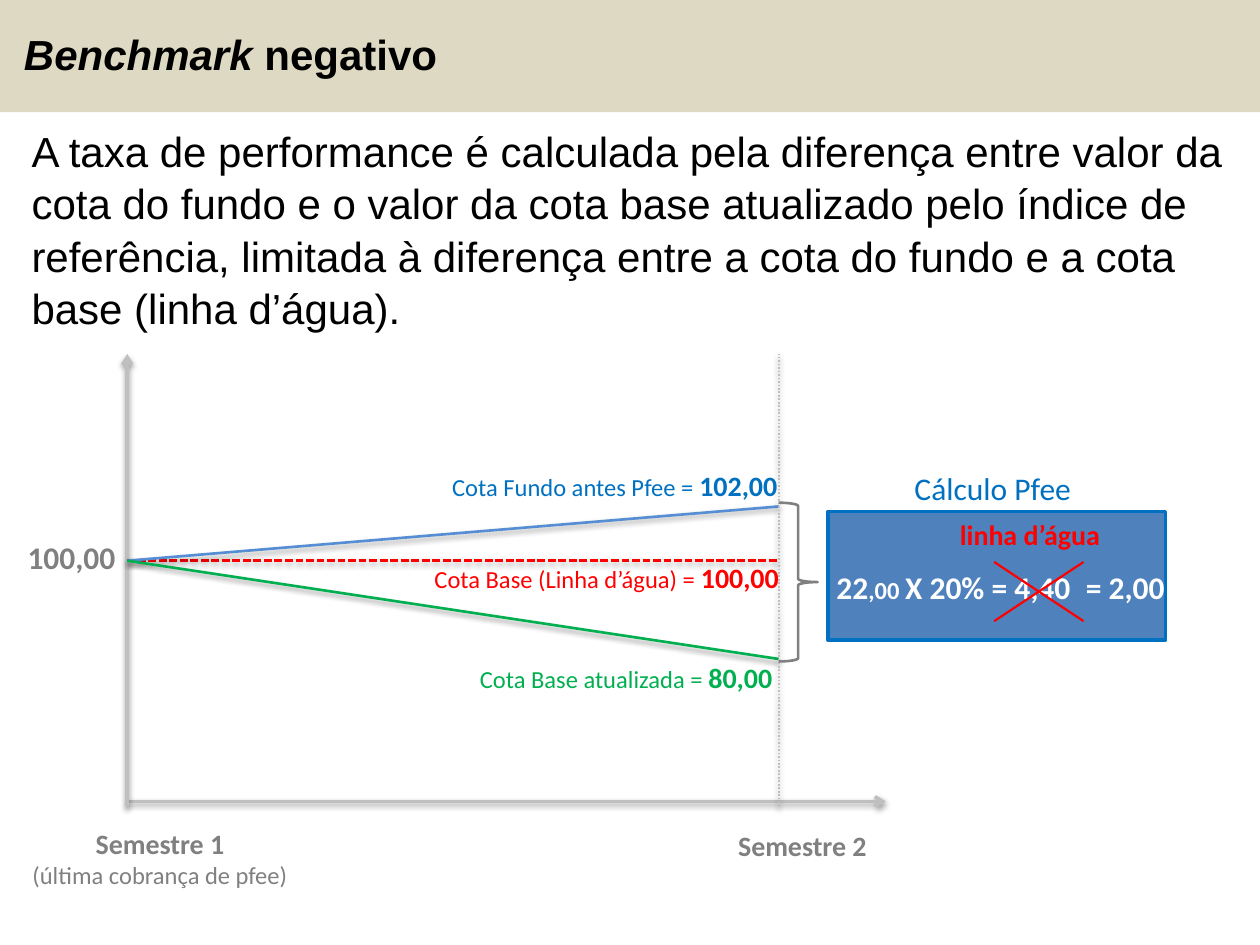
from pptx import Presentation
from pptx import util as u
from pptx.dml import color
from pptx.enum import dml, shapes, text
from pptx.oxml import parse_xml
from pptx.oxml.ns import nsdecls

In = u.Inches
GREY, MID, BLUE, RED, GREEN = "BFBFBF", "808080", "0070C0", "FF0000", "00B050"
WHITE, BLACK = "FFFFFF", "000000"


def rgb(code):
    return color.RGBColor.from_string(code)


class Deck:
    font = "Calibri"
    head = "Arial"

    def __init__(self):
        self.prs = Presentation()
        self.prs.slide_width, self.prs.slide_height = In(10), In(7.5)
        self.slide = self.prs.slides.add_slide(self.prs.slide_layouts[1])

    def place(self, shape, box):
        shape.left, shape.top, shape.width, shape.height = map(In, box)

    def run(self, para, words, size, tint, bold=False, italic=False, font=None):
        font_of = para.add_run()
        font_of.text = words
        font_of = font_of.font
        font_of.name, font_of.size = font or self.font, u.Pt(size)
        font_of.bold, font_of.italic = bold, italic
        font_of.color.rgb = rgb(tint)

    def title(self, box, fill, runs):
        shape = self.slide.shapes.title
        self.place(shape, box)
        shape.fill.solid()
        shape.fill.fore_color.rgb = rgb(fill)
        frame = shape.text_frame
        frame.auto_size = text.MSO_AUTO_SIZE.NONE
        frame.vertical_anchor = text.MSO_ANCHOR.MIDDLE
        frame.margin_left = In(0.19)
        para = frame.paragraphs[0]
        para.alignment = text.PP_ALIGN.LEFT
        for words, italic in runs:
            self.run(para, words, 24, BLACK, True, italic, self.head)

    def body(self, box, words):
        shape = self.slide.placeholders[1]
        self.place(shape, box)
        frame = shape.text_frame
        frame.auto_size = text.MSO_AUTO_SIZE.NONE
        para = frame.paragraphs[0]
        para.space_before = u.Pt(0)
        para.line_spacing = 1.04
        props = para._p.get_or_add_pPr()
        props.set("marL", "0")
        props.set("indent", "0")
        props.append(parse_xml(f"<a:buNone {nsdecls('a')}/>"))
        self.run(para, words, 24, BLACK, font=self.head)

    def label(self, box, *lines, align=text.PP_ALIGN.LEFT, wrap=False):
        shape = self.slide.shapes.add_textbox(*map(In, box))
        frame = shape.text_frame
        frame.word_wrap = wrap
        frame.auto_size = text.MSO_AUTO_SIZE.SHAPE_TO_FIT_TEXT
        for i, runs in enumerate(lines):
            para = frame.add_paragraph() if i else frame.paragraphs[0]
            para.alignment = align
            for item in runs:
                self.run(para, *item)

    def line(self, start, end, tint, width, dash=None, arrow=False, shade=True):
        link = self.slide.shapes.add_connector(
            shapes.MSO_CONNECTOR.STRAIGHT, *map(In, start + end))
        link.line.color.rgb = rgb(tint)
        link.line.width = u.Pt(width)
        if dash:
            link.line.dash_style = dash
        if arrow:
            link.line._get_or_add_ln().append(
                parse_xml(f'<a:tailEnd {nsdecls("a")} type="arrow"/>'))
        glow = (f'<a:outerShdw blurRad="{u.Pt(3.1)}" dist="{u.Pt(1.6)}" dir="5400000" '
                'rotWithShape="0"><a:srgbClr val="000000"><a:alpha val="38000"/>'
                '</a:srgbClr></a:outerShdw>') if shade else ""
        link._element.spPr.append(
            parse_xml(f'<a:effectLst {nsdecls("a")}>{glow}</a:effectLst>'))

    def shape(self, kind, box, tint, width, fill=None):
        item = self.slide.shapes.add_shape(kind, *map(In, box))
        item.shadow.inherit = False
        item.line.color.rgb = rgb(tint)
        item.line.width = u.Pt(width)
        if fill:
            item.fill.solid()
            item.fill.fore_color.rgb = rgb(fill)
        else:
            item.fill.background()


def main():
    deck = Deck()
    deck.body((0.15, 0.93, 9.73, 1.72),
              "A taxa de performance é calculada pela diferença entre valor da cota do "
              "fundo e o valor da cota base atualizado pelo índice de referência, limitada "
              "à diferença entre a cota do fundo e a cota base (linha d’água).")
    deck.title((0, -0.03, 10, 0.92), "DDD9C3",
               [("Benchmark ", True), ("negativo", False)])

    left, right, base, top, foot = 1.01, 6.18, 4.45, 2.81, 6.4
    dash = dml.MSO_LINE
    deck.line((left, 6.36), (7.03, 6.36), GREY, 2, arrow=True)
    deck.line((left, foot), (left, top), GREY, 2, arrow=True)
    for end, tint, style in ((base, RED, dash.SQUARE_DOT),
                             (4.02, "558ED5", None), (5.23, GREEN, None)):
        deck.line((left, base), (right, end), tint, 1.5, style)
    deck.line((right, foot), (right, top), GREY, 1, dash.ROUND_DOT)

    for box, words, value, tint in (
            ((3.35, 4.4, 2.96, 0.37), "Cota Base (Linha d’água) = ", "100,00", RED),
            ((3.49, 3.67, 2.81, 0.37), "Cota Fundo antes Pfee = ", "102,00", BLUE),
            ((3.71, 5.19, 2.55, 0.37), "Cota Base atualizada = ", "80,00", GREEN)):
        deck.label(box, [(words, 14, tint), (value, 16, tint, True)])

    deck.label((0.15, 6.51, 2.24, 0.61), [("Semestre 1", 16, MID, True)],
               [("(última cobrança de pfee)", 14, MID)], align=text.PP_ALIGN.CENTER)
    deck.label((5.76, 6.53, 1.23, 0.37), [("Semestre 2", 16, MID, True)])
    deck.label((0.12, 4.22, 0.91, 0.4), [("100,00", 18, MID, True)])

    kind = shapes.MSO_SHAPE
    deck.shape(kind.RECTANGLE, (6.57, 4.06, 2.68, 1.02), BLUE, 2, "4F81BD")
    deck.shape(kind.RIGHT_BRACE, (right, 3.99, 0.31, 1.26), MID, 1.5)
    deck.label((7.16, 3.67, 1.46, 0.4), [("Cálculo Pfee", 18, BLUE)])
    deck.label((6.54, 4.46, 2.14, 0.4),
               [("22", 18, WHITE, True), (",00 ", 14, WHITE, True),
                ("X 20% = 4,40", 18, WHITE, True)])
    for start, end in ((4.93, 4.46), (4.46, 4.93)):
        deck.line((7.89, start), (8.6, end), RED, 1.25, shade=False)
    deck.label((7.52, 4.06, 1.5, 0.37), [("linha d’água", 16, RED, True)], wrap=True)
    deck.label((8.52, 4.46, 0.89, 0.4), [("= 2,00", 18, WHITE, True)])
    deck.prs.save("out.pptx")


if __name__ == "__main__":
    main()
